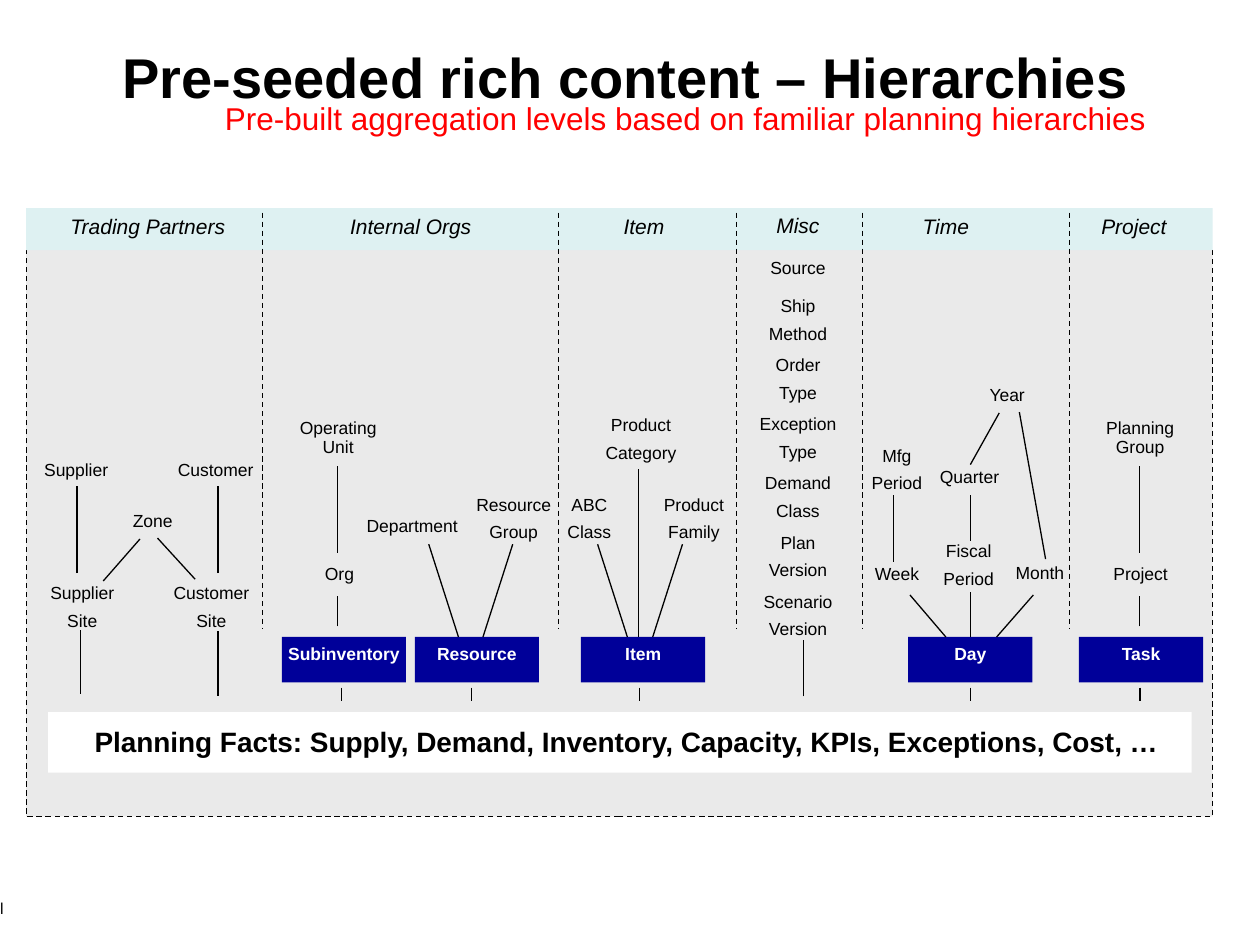
from lxml import etree
from pptx import Presentation
from pptx.dml.color import RGBColor
from pptx.enum.dml import MSO_LINE
from pptx.enum.shapes import MSO_CONNECTOR, MSO_SHAPE
from pptx.enum.text import MSO_ANCHOR, PP_ALIGN
from pptx.oxml.ns import qn
from pptx.util import Pt

DASH = MSO_LINE.DASH
STRAIGHT = MSO_CONNECTOR.STRAIGHT
RECTANGLE = MSO_SHAPE.RECTANGLE
TOP, MIDDLE = MSO_ANCHOR.TOP, MSO_ANCHOR.MIDDLE
LEFT, CENTER = PP_ALIGN.LEFT, PP_ALIGN.CENTER

BLACK, WHITE, RED, NAVY = "000000", "FFFFFF", "FF0000", "000099"
PANEL_GREY, HEADER_TINT = "EAEAEA", "DEF1F2"
LABEL_INSETS = (0, 3.6, 0, 3.6)
NO_INSETS = (0, 0, 0, 0)
LEVEL_WIDTH, LEVEL_HEIGHT, LEVEL_TOP = 71, 26, 245
TICK_TOP, TICK_BOTTOM = 274, 281.5

MISC_LABELS = [
    ("Ship\nMethod", 47.5), ("Order\nType", 40), ("Exception\nType", 58),
    ("Demand\nClass", 52), ("Plan\nVersion", 48), ("Scenario\nVersion", 54),
]

COLUMNS = [
    dict(width=135, heading=("Trading Partners", 17.5, 1, 104),
         labels=[("Supplier", 3, 141, 51), ("Customer", 79.5, 141, 57.5),
                 ("Zone", 53.5, 170.5, 37.5), ("Supplier\nSite", 6.5, 211.5, 51),
                 ("Customer\nSite", 77, 211.5, 57.5)],
         lines=[(65, 189, 44, 213), (75, 188.5, 96.5, 212),
                (29, 208.5, 29, 159), (109.5, 208.5, 109.5, 159),
                (109.5, 278.5, 109.5, 241.5), (31, 277.5, 31, 241)],
         levels=[], ticks=[]),
    dict(width=169, heading=("Internal Orgs", 43, 1, 83.5),
         labels=[("Operating\vUnit", 14, 117, 58.5), ("Org", 28.5, 200.5, 31),
                 ("Department", 52.5, 173, 66), ("Resource\nGroup", 115, 161, 57)],
         lines=[(43, 197, 43, 147.5), (43, 239, 43, 221.5),
                (126, 245, 143, 192), (112, 245, 95, 192)],
         levels=[("Subinventory", 11), ("Resource", 87)], ticks=[45, 119.5]),
    dict(width=102, heading=("Item", 30, 1, 38),
         labels=[("ABC\nClass", -2, 161, 39.5), ("Product\nCategory", 20, 115.5, 54.5),
                 ("Product\nFamily", 53, 161, 49)],
         lines=[(54, 245, 71, 192), (39.5, 245, 22.5, 192),
                (46, 245, 46, 149)],
         levels=[("Item", 13)], ticks=[46.5]),
    dict(width=72, heading=("Misc", 15.5, 0.5, 39),
         labels=[("Source", 12, 25.5, 46)] + [
             (text, 35 - width / 2, 47.4 + 33.8 * row, width)
             for row, (text, width) in enumerate(MISC_LABELS)],
         lines=[(38, 279, 38, 247)], levels=[], ticks=[]),
    dict(width=118, heading=("Time", 27, 1, 41),
         labels=[("Year", 65, 98.5, 35), ("Quarter", 37, 145, 48),
                 ("Mfg\nPeriod", -2, 133, 43), ("Fiscal\nPeriod", 39, 187.5, 43),
                 ("Week", -0.5, 200.5, 40), ("Month", 80, 200, 42.5)],
         lines=[(27, 221, 47.5, 245), (97.5, 221, 76.5, 245),
                (61.5, 245, 61.5, 219.5), (61.5, 190, 61.5, 164),
                (61.5, 146.5, 78, 117), (104.5, 200.5, 89.5, 116.5),
                (17.5, 202, 17.5, 164)],
         levels=[("Day", 26)], ticks=[61.5]),
    dict(width=82, heading=("Project", 11, 1, 52),
         labels=[("Project", 18, 200.5, 45.5), ("Planning\vGroup", 14, 117, 53)],
         lines=[(40, 197, 40, 147.5), (40, 239, 40, 221.5)],
         levels=[("Task", 5.5)], ticks=[40.5]),
]


def color(hex_value):
    return RGBColor.from_string(hex_value)


def write(shape, text, size, hex_value=BLACK, bold=False, italic=False,
          alignment=CENTER, anchor=TOP, insets=LABEL_INSETS, wrap=False, spacing=0.9):
    frame = shape.text_frame
    frame.text = text
    frame.word_wrap = wrap
    frame.vertical_anchor = anchor
    frame.margin_left, frame.margin_top, frame.margin_right, frame.margin_bottom = map(Pt, insets)
    for index, paragraph in enumerate(frame.paragraphs):
        paragraph.alignment = alignment
        paragraph.line_spacing = spacing
        paragraph.space_before = Pt(size / 2 if index else 0)
        for run in paragraph.runs:
            run.font.name = "Arial"
            run.font.size = Pt(size)
            run.font.bold = bold
            run.font.italic = italic
            run.font.color.rgb = color(hex_value)


def add_text(slide, box, text, size, **style):
    write(slide.shapes.add_textbox(*map(Pt, box)), text, size, **style)


def add_rectangle(slide, box, fill, dashed=False):
    shape = slide.shapes.add_shape(RECTANGLE, *map(Pt, box))
    shape.shadow.inherit = False
    shape.fill.solid()
    shape.fill.fore_color.rgb = color(fill)
    if dashed:
        shape.line.color.rgb = color(BLACK)
        shape.line.width = Pt(0.75)
        shape.line.dash_style = DASH
    else:
        shape.line.fill.background()
    return shape


def add_line(slide, start_x, start_y, end_x, end_y, dashed=False):
    line = slide.shapes.add_connector(STRAIGHT, *map(Pt, (start_x, start_y, end_x, end_y)))
    line.line.color.rgb = color(BLACK)
    line.line.width = Pt(0.75)
    if dashed:
        line.line.dash_style = DASH
    etree.SubElement(line._element.spPr, qn("a:effectLst"))
    return line


def add_titles(slide, left, top):
    add_text(slide, (left, top, 597, 74), "Pre-seeded rich content – Hierarchies", 32,
             bold=True, alignment=LEFT, insets=NO_INSETS, wrap=True, spacing=1)
    add_text(slide, (left + 0.5, top + 31.5, 649.5, 29),
             "Pre-built aggregation levels based on familiar planning hierarchies", 18,
             hex_value=RED, insets=(0, 3.6, 7.2, 3.6), wrap=True)


def add_column(slide, left, top, column, separated):
    heading, x, y, width = column["heading"]
    add_text(slide, (left + x, top + y, width, 21.5), heading, 12, italic=True)
    for text, x, y, width in column["labels"]:
        height = 31 if "\n" in text or "\v" in text else 19.5
        add_text(slide, (left + x, top + y, width, height), text, 10)
    levels = {}
    for text, x in column["levels"]:
        level = add_rectangle(slide, (left + x, top + LEVEL_TOP, LEVEL_WIDTH, LEVEL_HEIGHT), NAVY)
        write(level, text, 10, hex_value=WHITE, bold=True, insets=(0, 5, 0, 0))
        levels[(x + LEVEL_WIDTH / 2, LEVEL_TOP)] = level
    ticks = [(x, TICK_TOP, x, TICK_BOTTOM) for x in column["ticks"]]
    for start_x, start_y, end_x, end_y in column["lines"] + ticks:
        line = add_line(slide, left + start_x, top + start_y, left + end_x, top + end_y)
        if (start_x, start_y) in levels:
            line.begin_connect(levels[(start_x, start_y)], 0)
    if separated:
        edge = left + column["width"]
        add_line(slide, edge, top + 2.5, edge, top + 240, dashed=True)


def add_hierarchies(slide, left, top, width):
    add_rectangle(slide, (left, top + 23.5, width, 324), PANEL_GREY, dashed=True)
    add_rectangle(slide, (left + 12.5, top + 288, 653.5, 34.5), WHITE)
    add_text(slide, (left + 29, top + 293.5, 628.5, 26.5),
             "Planning Facts: Supply, Demand, Inventory, Capacity, KPIs, Exceptions, Cost, …",
             16, bold=True)
    add_rectangle(slide, (left, top, width, 24), HEADER_TINT)
    for column in COLUMNS:
        add_column(slide, left, top, column, column is not COLUMNS[-1])
        left += column["width"]


def main():
    presentation = Presentation()
    presentation.slide_width, presentation.slide_height = Pt(720), Pt(540)
    slide = presentation.slides.add_slide(presentation.slide_layouts[6])
    add_text(slide, (0, 498, 708, 42), "l", 9, alignment=LEFT, anchor=MIDDLE,
             insets=NO_INSETS, wrap=True, spacing=1)
    add_hierarchies(slide, 15, 119, 678)
    add_titles(slide, 70, 24)
    presentation.save("out.pptx")


if __name__ == "__main__":
    main()
